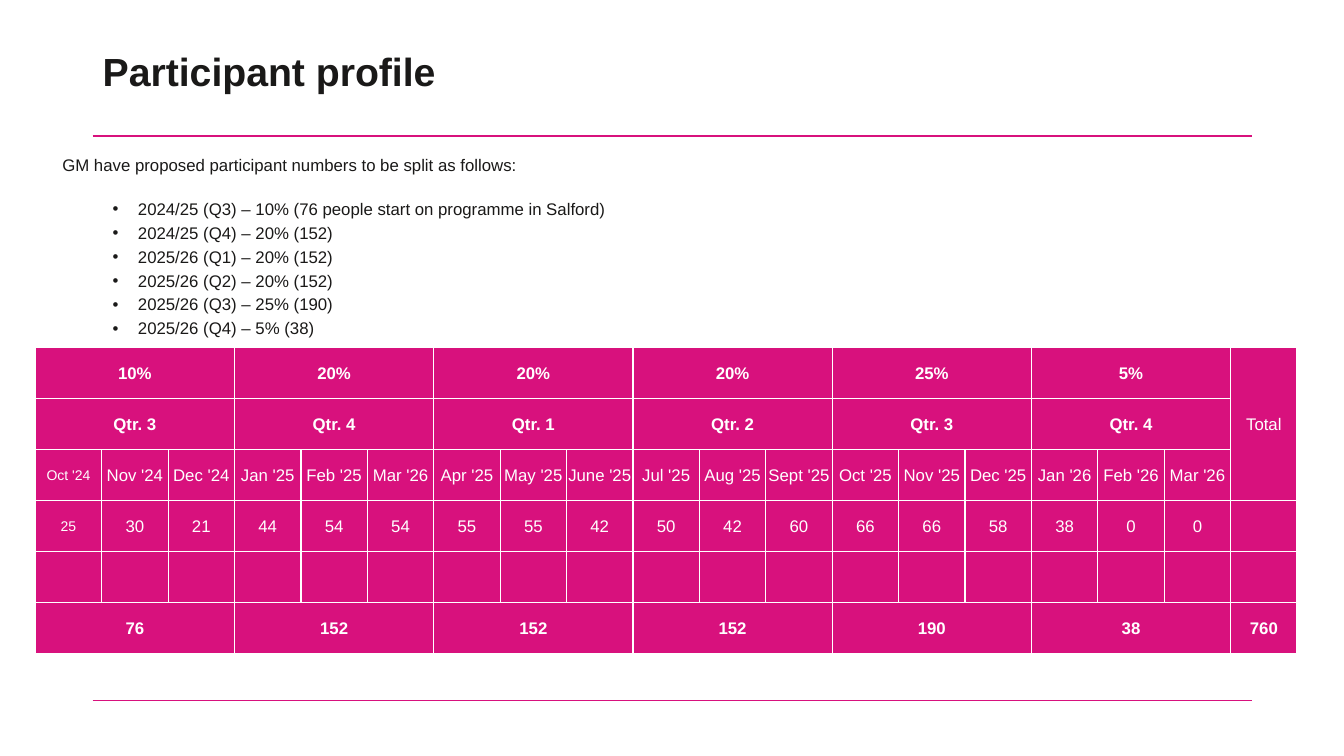
"""Build the participant profile slide with its quarterly table."""
from lxml.etree import SubElement
from pptx import Presentation
from pptx.dml.color import RGBColor
from pptx.enum.shapes import MSO_CONNECTOR
from pptx.enum.text import MSO_ANCHOR, PP_ALIGN
from pptx.oxml import parse_xml
from pptx.oxml.ns import nsdecls, qn
from pptx.util import Inches, Pt

PINK, INK, WHITE = "D8117D", "1A1918", "FFFFFF"
TITLE = "Participant profile"
INTRO = "GM have proposed participant numbers to be split as follows:"
SPLITS = [
    "2024/25 (Q3) – 10% (76 people start on programme in Salford)",
    "2024/25 (Q4) – 20% (152)",
    "2025/26 (Q1) – 20% (152)",
    "2025/26 (Q2) – 20% (152)",
    "2025/26 (Q3) – 25% (190)",
    "2025/26 (Q4) – 5% (38)",
]
QUARTERS = [
    ("10%", "Qtr. 3", {"Oct '24": 25, "Nov '24": 30, "Dec '24": 21}),
    ("20%", "Qtr. 4", {"Jan '25": 44, "Feb '25": 54, "Mar '26": 54}),
    ("20%", "Qtr. 1", {"Apr '25": 55, "May '25": 55, "June '25": 42}),
    ("20%", "Qtr. 2", {"Jul '25": 50, "Aug '25": 42, "Sept '25": 60}),
    ("25%", "Qtr. 3", {"Oct '25": 66, "Nov '25": 66, "Dec '25": 58}),
    ("5%", "Qtr. 4", {"Jan '26": 38, "Feb '26": 0, "Mar '26": 0}),
]
SHARE_ROW, QUARTER_ROW, MONTH_ROW, COUNT_ROW, BLANK_ROW, SUM_ROW = range(6)
ROWS, MONTHS = 6, 3
TOTAL_COLUMN = MONTHS * len(QUARTERS)
TABLE_LEFT, TABLE_TOP, TABLE_WIDTH, ROW_HEIGHT = 0.35, 3.45, 12.52, 0.506
RULE_LEFT, RULE_RIGHT, RULE_HEIGHTS = 0.92, 12.42, (1.35, 6.95)


def color(value):
    return RGBColor.from_string(value)


def write(paragraph, text, size=12, ink=INK, bold=False, align=PP_ALIGN.LEFT,
          spacing=None, before=None, bullet=False):
    if bullet:
        properties = paragraph._p.get_or_add_pPr()
        properties.set("marL", str(Inches(0.75)))
        properties.set("indent", str(Inches(-0.25)))
        SubElement(properties, qn("a:buFont"), typeface="Arial")
        SubElement(properties, qn("a:buChar"), char="•")
    paragraph.alignment = align
    if spacing:
        paragraph.line_spacing = spacing
    if before:
        paragraph.space_before = Pt(before)
    run = paragraph.add_run()
    run.text = text
    run.font.name, run.font.size, run.font.bold = "Arial", Pt(size), bold
    run.font.color.rgb = color(ink)


def add_frame(slide, left, top, width, height, anchor):
    box = slide.shapes.add_textbox(*map(Inches, (left, top, width, height)))
    box.text_frame.word_wrap = True
    box.text_frame.vertical_anchor = anchor
    return box.text_frame


def add_rule(slide, height):
    rule = slide.shapes.add_connector(
        MSO_CONNECTOR.STRAIGHT, Inches(RULE_LEFT), Inches(height),
        Inches(RULE_RIGHT), Inches(height))
    rule.line.color.rgb = color(PINK)
    rule.line.width = Pt(1)
    SubElement(rule._element.spPr, qn("a:effectLst"))


def style_cell(cell):
    properties = cell._tc.get_or_add_tcPr()
    for side in "LRTB":
        properties.append(parse_xml(
            f'<a:ln{side} {nsdecls("a")} w="{Pt(1)}"><a:solidFill>'
            f'<a:srgbClr val="{WHITE}"/></a:solidFill></a:ln{side}>'))
    cell.fill.solid()
    cell.fill.fore_color.rgb = color(PINK)
    cell.margin_left = cell.margin_right = cell.margin_top = Inches(0.01)
    cell.margin_bottom = 0
    cell.vertical_anchor = MSO_ANCHOR.MIDDLE


def add_profile_table(slide):
    table = slide.shapes.add_table(
        ROWS, TOTAL_COLUMN + 1, Inches(TABLE_LEFT), Inches(TABLE_TOP),
        Inches(TABLE_WIDTH), Inches(ROWS * ROW_HEIGHT)).table
    table.first_row = table.horz_banding = False
    for column in table.columns:
        column.width = Inches(TABLE_WIDTH / (TOTAL_COLUMN + 1))
    for cell in table.iter_cells():
        style_cell(cell)

    def put(row, column, text, **style):
        write(table.cell(row, column).text_frame.paragraphs[0], str(text),
              ink=WHITE, align=PP_ALIGN.CENTER, **style)

    for index, (share, quarter, months) in enumerate(QUARTERS):
        first = index * MONTHS
        headings = {SHARE_ROW: share, QUARTER_ROW: quarter,
                    SUM_ROW: sum(months.values())}
        for row, text in headings.items():
            table.cell(row, first).merge(table.cell(row, first + MONTHS - 1))
            put(row, first, text, bold=True)
        for column, (month, count) in enumerate(months.items(), first):
            size = 12 if column else 10
            put(MONTH_ROW, column, month, size=size)
            put(COUNT_ROW, column, count, size=size)
    table.cell(SHARE_ROW, TOTAL_COLUMN).merge(table.cell(MONTH_ROW, TOTAL_COLUMN))
    put(SHARE_ROW, TOTAL_COLUMN, "Total")
    put(SUM_ROW, TOTAL_COLUMN, sum(sum(months.values()) for *_, months in QUARTERS),
        bold=True)


def main():
    presentation = Presentation()
    presentation.slide_width, presentation.slide_height = Inches(13.33), Inches(7.5)
    slide = presentation.slides.add_slide(presentation.slide_layouts[6])
    for height in RULE_HEIGHTS:
        add_rule(slide, height)
    title = add_frame(slide, 0.92, 0.32, 8.01, 0.83, MSO_ANCHOR.MIDDLE)
    write(title.paragraphs[0], TITLE, size=28, bold=True, spacing=0.9)
    add_profile_table(slide)
    body = add_frame(slide, 0.52, 1.52, 12.57, 1.92, MSO_ANCHOR.TOP)
    write(body.paragraphs[0], INTRO, spacing=0.84)
    for index, split in enumerate(SPLITS):
        write(body.add_paragraph(), split, spacing=0.84,
              before=5 if index else 19, bullet=True)
    presentation.save("out.pptx")


if __name__ == "__main__":
    main()
